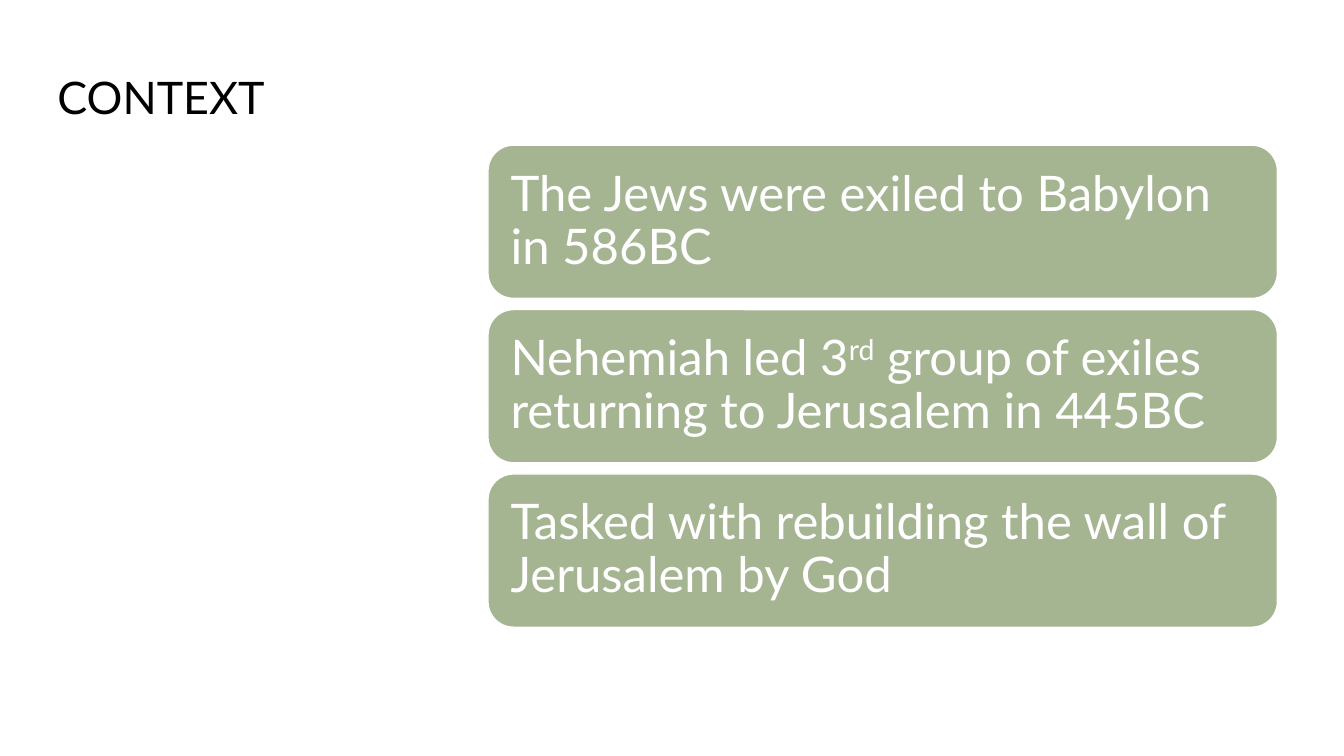
"""Build the CONTEXT slide: a title beside three stacked statement cards."""
from dataclasses import dataclass

from pptx import Presentation
from pptx.dml.color import RGBColor
from pptx.enum.shapes import MSO_SHAPE as Shape
from pptx.enum.text import MSO_ANCHOR as Anchor, PP_ALIGN as Align
from pptx.util import Emu, Inches, Pt

WIDTH, HEIGHT = Inches(13.33), Inches(7.5)
FONT = "Lato"
BLACK, WHITE, SAGE = "000000", "FFFFFF", "A5B592"
CARD_TOP, CARD_PITCH = 19.2, 21.75


@dataclass
class Box:
    """A rectangle in percent of the slide's width and height."""
    left: float
    top: float
    width: float
    height: float

    def emu(self) -> tuple[Emu, Emu, Emu, Emu]:
        """Return left, top, width and height as lengths."""
        return (Emu(int(WIDTH * self.left / 100)), Emu(int(HEIGHT * self.top / 100)),
                Emu(int(WIDTH * self.width / 100)), Emu(int(HEIGHT * self.height / 100)))


@dataclass
class Piece:
    """A stretch of text, raised or on the baseline."""
    text: str
    raised: bool = False


CARDS = [
    [Piece("The Jews were exiled to Babylon in 586BC")],
    [Piece("Nehemiah led 3"), Piece("rd", raised=True),
     Piece(" group of exiles returning to Jerusalem in 445BC")],
    [Piece("Tasked with rebuilding the wall of Jerusalem by God")],
]


def rgb(color: str) -> RGBColor:
    """Turn a hex string into a colour."""
    return RGBColor.from_string(color)


def write(tf, pieces: list[Piece], size: int, color: str) -> None:
    """Write the pieces as one left-aligned paragraph."""
    tf.word_wrap = True
    p = tf.paragraphs[0]
    p.alignment = Align.LEFT
    p.line_spacing = 0.9
    for piece in pieces:
        r = p.add_run()
        r.text = piece.text
        r.font.name, r.font.size = FONT, Pt(size)
        r.font.color.rgb = rgb(color)
        if piece.raised:
            r.font._element.set("baseline", "30000")


def add_title(slide, text: str, box: Box) -> None:
    """Add the slide's title."""
    tf = slide.shapes.add_textbox(*box.emu()).text_frame
    write(tf, [Piece(text)], 32, BLACK)


def add_card(slide, pieces: list[Piece], box: Box) -> None:
    """Add a rounded card holding one statement."""
    sp = slide.shapes.add_shape(Shape.ROUNDED_RECTANGLE, *box.emu())
    sp.shadow.inherit = False
    sp.fill.solid()
    sp.fill.fore_color.rgb = rgb(SAGE)
    sp.line.color.rgb = rgb(WHITE)
    sp.line.width = Pt(1)
    tf = sp.text_frame
    tf.vertical_anchor = Anchor.MIDDLE
    tf.margin_left = tf.margin_right = tf.margin_top = tf.margin_bottom = Inches(0.15)
    write(tf, pieces, 35, WHITE)


def main() -> None:
    """Build and save the slide."""
    prs = Presentation()
    prs.slide_width, prs.slide_height = WIDTH, HEIGHT
    slide = prs.slides.add_slide(prs.slide_layouts[6])
    add_title(slide, "CONTEXT", Box(3.53, 9.33, 28.66, 52.8))
    for row, pieces in enumerate(CARDS):
        add_card(slide, pieces, Box(36.31, CARD_TOP + row * CARD_PITCH, 58.74, 20.27))
    prs.save("out.pptx")


if __name__ == "__main__":
    main()
